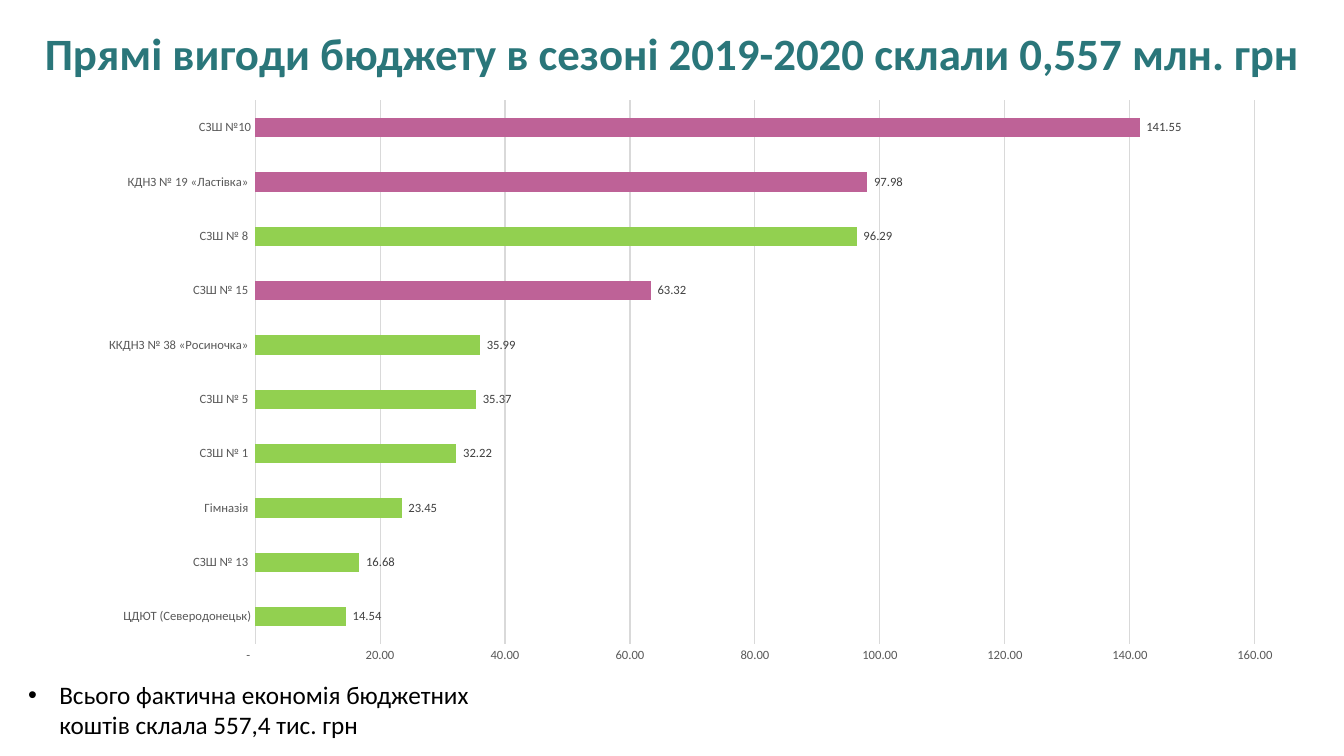
"""Build a slide with a bar chart of budget savings by institution."""
from dataclasses import dataclass

import pptx
import pptx.chart.data
import pptx.dml.color
import pptx.enum.chart
import pptx.enum.text
import pptx.oxml
import pptx.oxml.ns
import pptx.util


@dataclass(frozen=True)
class Theme:
    """Hold the font, colours and type sizes of the slide."""
    font: str = "Calibri"
    heading: str = "2A767A"
    ink: str = "000000"
    axis_text: str = "595959"
    label_text: str = "404040"
    grid: str = "D9D9D9"
    bar: str = "92D050"
    accent: str = "BE6297"
    title_size: int = 32
    note_size: int = 18
    chart_size: int = 10
    label_size: int = 9
    hairline: float = 0.75


THEME = Theme()
WIDTH, HEIGHT = 13.33, 7.5
NUMBER_FORMAT = '_(* #,##0.00_);_(* \\(#,##0.00\\);_(* "-"??_);_(@_)'
SAVINGS = [
    ("ЦДЮТ (Северодонецьк)", 14.54),
    ("СЗШ № 13 ", 16.68),
    ("Гімназія ", 23.45),
    ("СЗШ № 1 ", 32.22),
    ("СЗШ № 5 ", 35.37),
    ("ККДНЗ № 38 «Росиночка» ", 35.99),
    ("СЗШ № 15 ", 63.32),
    ("СЗШ № 8 ", 96.29),
    ("КДНЗ № 19 «Ластівка» ", 97.98),
    ("СЗШ №10", 141.55),
]
ACCENTED = {"СЗШ № 15 ", "КДНЗ № 19 «Ластівка» ", "СЗШ №10"}


def rgb(code):
    """Return a colour object for a hex code."""
    return pptx.dml.color.RGBColor.from_string(code)


def area(left, top, width, height):
    """Turn percentages of the slide's size into lengths."""
    shares = (left * WIDTH, top * HEIGHT, width * WIDTH, height * HEIGHT)
    return [pptx.util.Inches(share / 100) for share in shares]


def set_font(font, size, color, bold=False):
    """Format a font from the theme."""
    font.name = THEME.font
    font.size = pptx.util.Pt(size)
    font.bold = bold
    font.color.rgb = rgb(color)


def set_line(line, color):
    """Give a line the thin chart stroke."""
    line.color.rgb = rgb(color)
    line.width = pptx.util.Pt(THEME.hairline)


def write_text(frame, text, size, color, bold=False, align=None, anchor=None):
    """Write one formatted paragraph into a text frame and return it."""
    frame.word_wrap = True
    frame.auto_size = pptx.enum.text.MSO_AUTO_SIZE.NONE
    frame.vertical_anchor = anchor
    para = frame.paragraphs[0]
    para.alignment = align
    span = para.add_run()
    span.text = text
    set_font(span.font, size, color, bold)
    return para


def add_title(page, text):
    """Place and format the title placeholder."""
    title = page.shapes.title
    title.left, title.top, title.width, title.height = area(0.75, 2.27, 98.57, 9.47)
    write_text(title.text_frame, text, THEME.title_size, THEME.heading, bold=True,
               align=pptx.enum.text.PP_ALIGN.CENTER,
               anchor=pptx.enum.text.MSO_ANCHOR.MIDDLE)


def add_bullet_note(page, text):
    """Add a bulleted note below the chart."""
    box = page.shapes.add_textbox(*area(1.35, 89.2, 37.21, 13.47))
    para = write_text(box.text_frame, text, THEME.note_size, THEME.ink,
                      anchor=pptx.enum.text.MSO_ANCHOR.TOP)
    indent = pptx.util.Inches(0.31)
    properties = para._p.get_or_add_pPr()
    properties.set("marL", str(indent))
    properties.set("indent", str(-indent))
    for tag, name, value in (("a:buFont", "typeface", "Arial"), ("a:buChar", "char", "•")):
        bullet = pptx.oxml.parse_xml(f'<{tag} {pptx.oxml.ns.nsdecls("a")} {name}="{value}"/>')
        properties.append(bullet)


def format_axis(axis):
    """Apply the shared axis style."""
    axis.major_tick_mark = pptx.enum.chart.XL_TICK_MARK.NONE
    axis.minor_tick_mark = pptx.enum.chart.XL_TICK_MARK.NONE
    set_font(axis.tick_labels.font, THEME.label_size, THEME.axis_text)


def format_labels(plot):
    """Show values beyond the ends of the bars."""
    plot.has_data_labels = True
    labels = plot.data_labels
    labels.show_value = True
    labels.position = pptx.enum.chart.XL_LABEL_POSITION.OUTSIDE_END
    labels.number_format = NUMBER_FORMAT
    labels.number_format_is_linked = False
    set_font(labels.font, THEME.label_size, THEME.label_text)


def add_savings_chart(page):
    """Add the bar chart of savings with accented institutions."""
    data = pptx.chart.data.CategoryChartData(number_format=NUMBER_FORMAT)
    data.categories = [name for name, _ in SAVINGS]
    data.add_series("Series 1", [value for _, value in SAVINGS])
    kind = pptx.enum.chart.XL_CHART_TYPE.BAR_CLUSTERED
    chart = page.shapes.add_chart(kind, *area(6.3, 11.73, 90.4, 77.47), data).chart
    chart.has_legend = False
    chart.has_title = False
    set_font(chart.font, THEME.chart_size, THEME.ink)

    format_axis(chart.category_axis)
    set_line(chart.category_axis.format.line, THEME.grid)
    values = chart.value_axis
    format_axis(values)
    values.format.line.fill.background()
    values.minimum_scale, values.maximum_scale, values.major_unit = 0, 160, 20
    values.has_major_gridlines = True
    set_line(values.major_gridlines.format.line, THEME.grid)
    values.tick_labels.number_format = NUMBER_FORMAT
    values.tick_labels.number_format_is_linked = False

    plot = chart.plots[0]
    plot.gap_width = 182
    plot.vary_by_categories = False
    format_labels(plot)
    series = plot.series[0]
    series.invert_if_negative = False
    series.format.fill.solid()
    series.format.fill.fore_color.rgb = rgb(THEME.bar)
    for index, (name, _) in enumerate(SAVINGS):
        if name in ACCENTED:
            fill = series.points[index].format.fill
            fill.solid()
            fill.fore_color.rgb = rgb(THEME.accent)


def main():
    """Build and save the deck."""
    deck = pptx.Presentation()
    deck.slide_width = pptx.util.Inches(WIDTH)
    deck.slide_height = pptx.util.Inches(HEIGHT)
    page = deck.slides.add_slide(deck.slide_layouts.get_by_name("Title Only"))
    add_title(page, "Прямі вигоди бюджету в сезоні 2019-2020 склали 0,557 млн. грн")
    add_savings_chart(page)
    add_bullet_note(page, "Всього фактична економія бюджетних коштів склала 557,4 тис. грн")
    deck.save("out.pptx")


if __name__ == "__main__":
    main()
